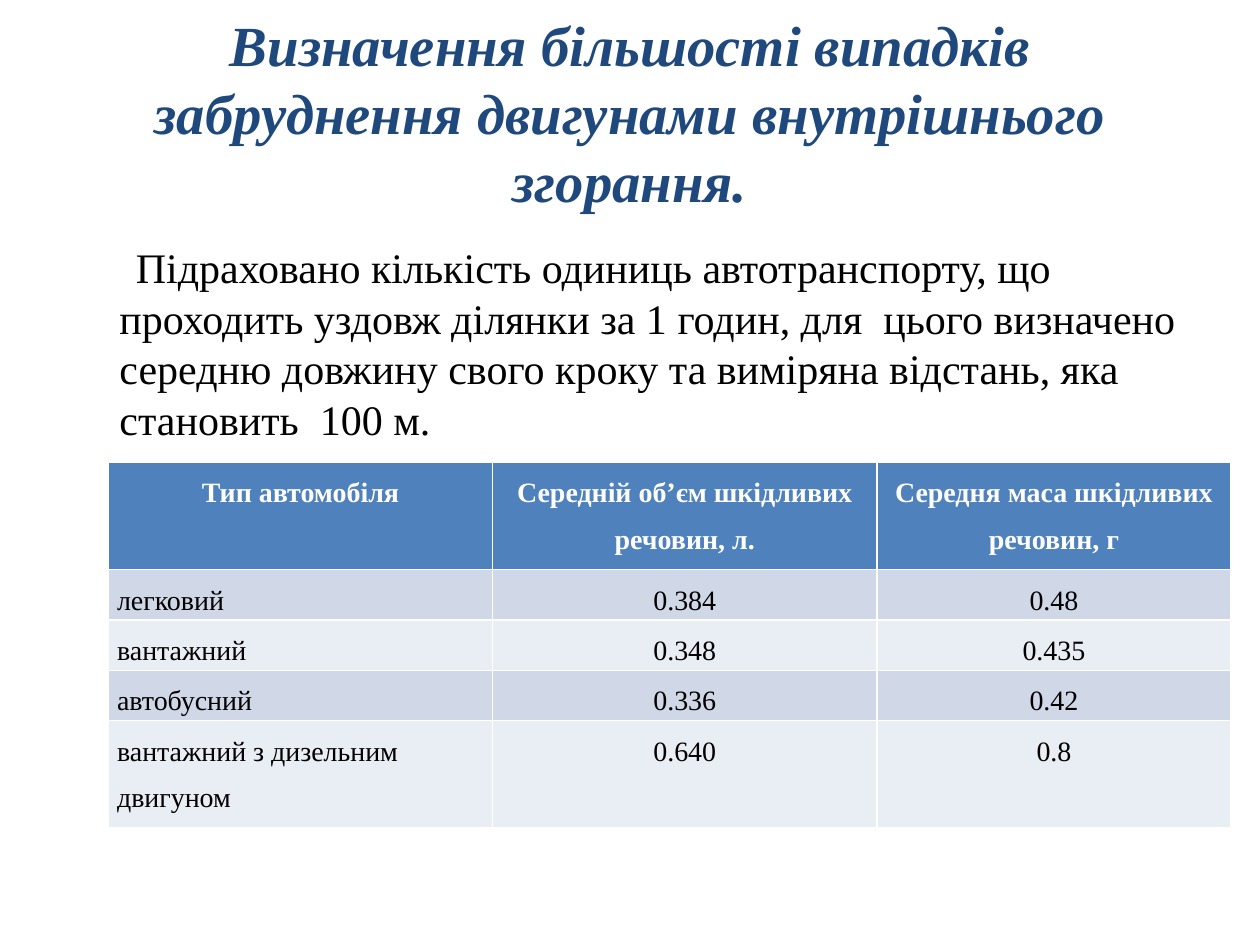
from pptx import Presentation
from pptx.dml.color import RGBColor
from pptx.enum.text import MSO_ANCHOR, MSO_AUTO_SIZE, PP_ALIGN
from pptx.util import Inches, Pt

THEME = {
    "font": "Times New Roman",
    "title": "1F497D", "text": "000000", "header_text": "FFFFFF",
    "header": "4F81BD", "bands": ("D0D8E8", "E9EDF4"),
    "title_size": 32.4, "body_size": 24, "table_size": 16,
}


def write(para, words, size, color, align=PP_ALIGN.LEFT, **styles):
    """Put one formatted span into a paragraph."""
    para.alignment = align
    span = para.add_run()
    span.text = words
    font_values = {"name": THEME["font"], "size": Pt(size), **styles}
    for name, value in font_values.items():
        setattr(span.font, name, value)
    span.font.color.rgb = RGBColor.from_string(color)


def format_frame(target, values):
    for name, value in values.items():
        setattr(target, name, value)


deck = Presentation()
deck.slide_width, deck.slide_height = Inches(10), Inches(7.5)
page = deck.slides.add_slide(deck.slide_layouts[5])

# Title, raised within its box by the bottom margin
title = page.shapes.title
format_frame(title, {"left": Inches(0.5), "top": Inches(0.3),
                     "width": Inches(9), "height": Inches(1.73)})
format_frame(title.text_frame, {
    "word_wrap": True, "auto_size": MSO_AUTO_SIZE.NONE,
    "vertical_anchor": MSO_ANCHOR.MIDDLE, "margin_bottom": Inches(0.6)})
write(title.text_frame.paragraphs[0],
      "Визначення більшості випадків забруднення двигунами внутрішнього згорання.",
      THEME["title_size"], THEME["title"], PP_ALIGN.CENTER, bold=True, italic=True)

# Introductory paragraph with a first-line indent
body = page.shapes.add_textbox(Inches(0.47), Inches(1.72), Inches(9), Inches(4.95))
format_frame(body.text_frame, {
    "word_wrap": True, "auto_size": MSO_AUTO_SIZE.NONE, "margin_top": Inches(0.2)})
para = body.text_frame.paragraphs[0]
properties = para._p.get_or_add_pPr()
properties.set("marL", str(Inches(0.38)))
properties.set("indent", str(Inches(0.13)))
write(para,
      "Підраховано кількість одиниць автотранспорту, що проходить уздовж ділянки "
      "за 1 годин, для  цього визначено середню довжину свого кроку та виміряна "
      "відстань, яка становить  100 м.",
      THEME["body_size"], THEME["text"])

# Emissions table
rows = [
    ("Тип автомобіля", "Середній об’єм шкідливих речовин, л.",
     "Середня маса шкідливих речовин, г"),
    ("легковий", "0.384", "0.48"),
    ("вантажний", "0.348", "0.435"),
    ("автобусний", "0.336", "0.42"),
    ("вантажний з дизельним двигуном", "0.640", "0.8"),
]
column_widths = (3.05, 3.05, 2.81)
row_heights = (0.85, 0.4, 0.4, 0.4, 0.85)
table = page.shapes.add_table(
    len(rows), len(column_widths), Inches(0.86), Inches(3.67),
    Inches(sum(column_widths)), Inches(sum(row_heights))).table
for column, width in zip(table.columns, column_widths):
    column.width = Inches(width)

cell_margins = {"margin_left": Inches(0.07), "margin_right": Inches(0.07),
                "margin_top": 0, "margin_bottom": 0}
for row_index, (row, height) in enumerate(zip(rows, row_heights)):
    table.rows[row_index].height = Inches(height)
    is_header = row_index == 0
    fill = THEME["header"] if is_header else THEME["bands"][(row_index - 1) % 2]
    color = THEME["header_text"] if is_header else THEME["text"]
    for column_index, words in enumerate(row):
        cell = table.cell(row_index, column_index)
        format_frame(cell, cell_margins)
        cell.fill.solid()
        cell.fill.fore_color.rgb = RGBColor.from_string(fill)
        para = cell.text_frame.paragraphs[0]
        format_frame(para, {"line_spacing": 1.5, "space_after": Pt(12)})
        centred = is_header or column_index > 0
        write(para, words, THEME["table_size"], color,
              PP_ALIGN.CENTER if centred else PP_ALIGN.LEFT, bold=is_header)

deck.save("out.pptx")
